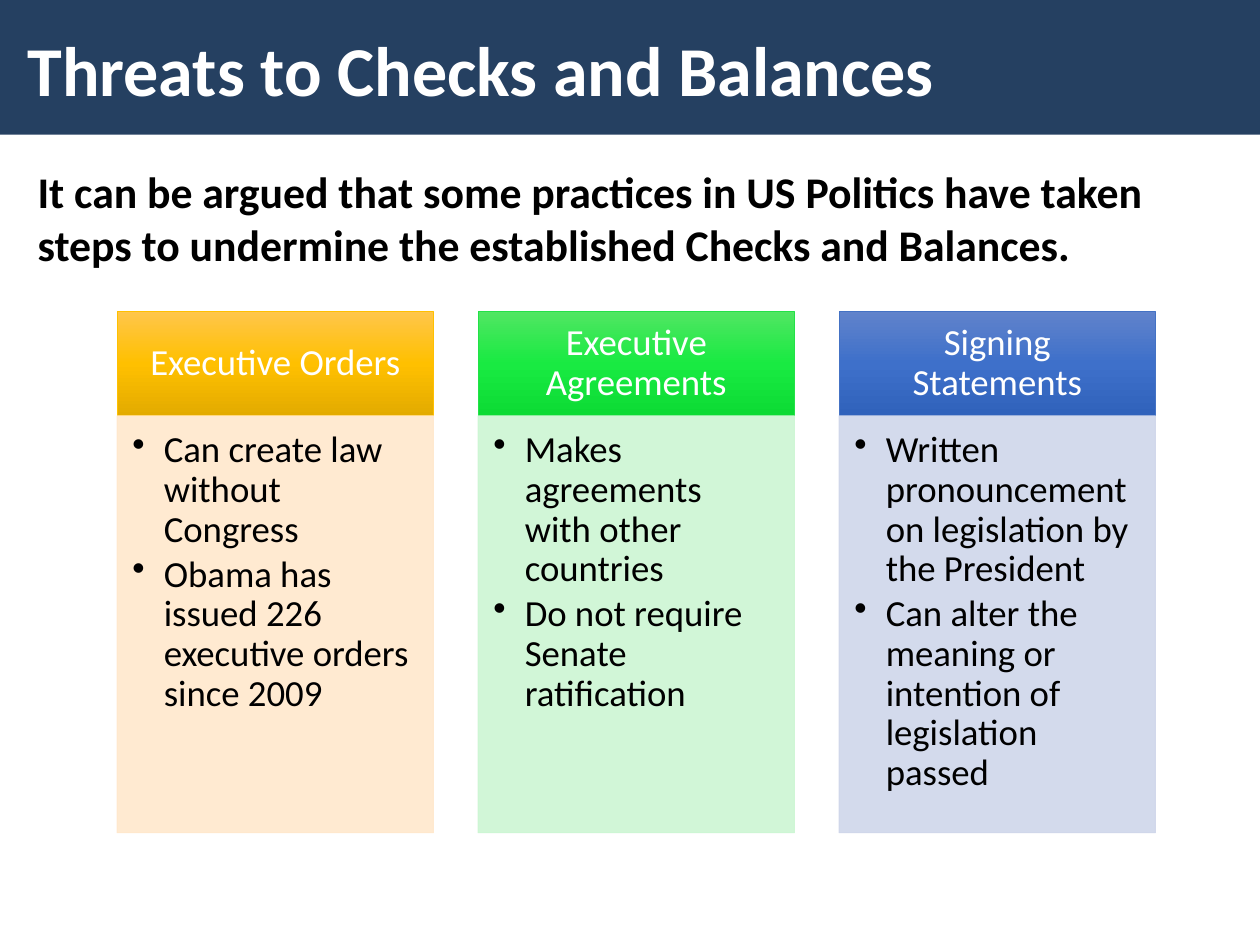
from copy import deepcopy

from pptx import Presentation
from pptx.dml.color import RGBColor
from pptx.enum.shapes import MSO_SHAPE
from pptx.enum.text import MSO_ANCHOR, PP_ALIGN
from pptx.oxml.ns import qn
from pptx.oxml.xmlchemy import OxmlElement
from pptx.util import Inches, Pt


def rgb(value):
    return RGBColor.from_string(value)


class Deck:
    font = "Calibri"
    navy, white, black = "254061", "FFFFFF", "000000"
    body_size = 21

    def __init__(self, prs):
        self.s = prs.slides.add_slide(prs.slide_layouts[6])

    def rect(self, x, y, w, h, color, line=None):
        sp = self.s.shapes.add_shape(
            MSO_SHAPE.RECTANGLE, Inches(x), Inches(y), Inches(w), Inches(h))
        sp.shadow.inherit = False
        sp.fill.solid()
        sp.fill.fore_color.rgb = rgb(color)
        if line:
            sp.line.color.rgb = rgb(line)
            sp.line.width = Pt(0.5)
        else:
            sp.line.fill.background()
        return sp

    def gradient(self, sp, colors):
        sp.fill.gradient()
        sp.fill.gradient_angle = 270
        stops = sp._element.spPr.find(qn("a:gradFill")).find(qn("a:gsLst"))
        stops.append(deepcopy(stops[0]))
        for i, (stop, color) in enumerate(zip(sp.fill.gradient_stops, colors)):
            stop.position = i / (len(colors) - 1)
            stop.color.rgb = rgb(color)

    def translucent(self, sp, percent):
        for color in sp._element.spPr.iter(qn("a:srgbClr")):
            alpha = OxmlElement("a:alpha")
            alpha.set("val", str(percent * 1000))
            color.append(alpha)

    def frame(self, sp, insets, anchor=MSO_ANCHOR.TOP):
        tf = sp.text_frame
        tf.word_wrap = True
        tf.vertical_anchor = anchor
        tf.margin_left, tf.margin_top, tf.margin_right, tf.margin_bottom = map(Inches, insets)
        return tf

    def run(self, p, text, size, color, bold=False):
        r = p.add_run()
        r.text = text
        r.font.name = self.font
        r.font.size = Pt(size)
        r.font.bold = bold
        r.font.color.rgb = rgb(color)

    def text(self, x, y, w, h, text, size, color):
        sp = self.s.shapes.add_textbox(Inches(x), Inches(y), Inches(w), Inches(h))
        p = self.frame(sp, (0.1, 0.05, 0.1, 0.05)).paragraphs[0]
        self.run(p, text, size, color, bold=True)
        return p

    def heading(self, x, y, w, h, text, colors, line):
        sp = self.rect(x, y, w, h, colors[1], line)
        self.gradient(sp, colors)
        tf = self.frame(sp, (0.16, 0.09, 0.16, 0.09), MSO_ANCHOR.MIDDLE)
        p = tf.paragraphs[0]
        p.alignment = PP_ALIGN.CENTER
        p.line_spacing = 0.9
        self.run(p, text, self.body_size, self.white)

    def bullets(self, x, y, w, h, items, color):
        sp = self.rect(x, y, w, h, color, color)
        self.translucent(sp, 90)
        tf = self.frame(sp, (0.12, 0.12, 0.16, 0.18))
        for i, item in enumerate(items):
            p = tf.add_paragraph() if i else tf.paragraphs[0]
            p.alignment = PP_ALIGN.LEFT
            p.line_spacing = 0.9
            p.space_after = Pt(0.15 * self.body_size)
            pPr = p._p.get_or_add_pPr()
            pPr.set("marL", str(Inches(0.25)))
            pPr.set("indent", str(Inches(-0.25)))
            bullet = OxmlElement("a:buChar")
            bullet.set("char", "•")
            pPr.append(bullet)
            self.run(p, item, self.body_size, self.black)


COLUMNS = [
    ("Executive Orders", ("FFC64B", "FFC000", "E3AB00"), "FFC000", "FFE8CC",
     ["Can create law without Congress",
      "Obama has issued 226 executive orders since 2009"]),
    ("Executive Agreements", ("51E663", "19EA42", "0CDB34"), "23E148", "CCF6D3",
     ["Makes agreements with other countries",
      "Do not require Senate ratification"]),
    ("Signing Statements", ("6183CB", "3E70CA", "3062BB"), "4472C4", "CFD6EA",
     ["Written pronouncement on legislation by the President",
      "Can alter the meaning or intention of legislation passed"]),
]


def main():
    prs = Presentation()
    prs.slide_width, prs.slide_height = Inches(10), Inches(7.5)
    deck = Deck(prs)
    deck.rect(0, -0.03, 10, 1.1, deck.navy)
    deck.text(0.12, 0.16, 9.69, 0.77, "Threats to Checks and Balances", 40, deck.white)
    p = deck.text(
        0.2, 1.26, 9.61, 1.06,
        "It can be argued that some practices in US Politics have taken steps "
        "to undermine the established Checks and Balances.", 25, deck.black)
    p.space_before = Pt(5)

    left, top, width, pitch = 0.93, 2.47, 2.51, 2.865
    head_h, body_h = 0.83, 3.31
    for i, (title, colors, line, tint, items) in enumerate(COLUMNS):
        x = left + i * pitch
        deck.heading(x, top, width, head_h, title, colors, line)
        deck.bullets(x, top + head_h, width, body_h, items, tint)
    prs.save("out.pptx")


if __name__ == "__main__":
    main()
